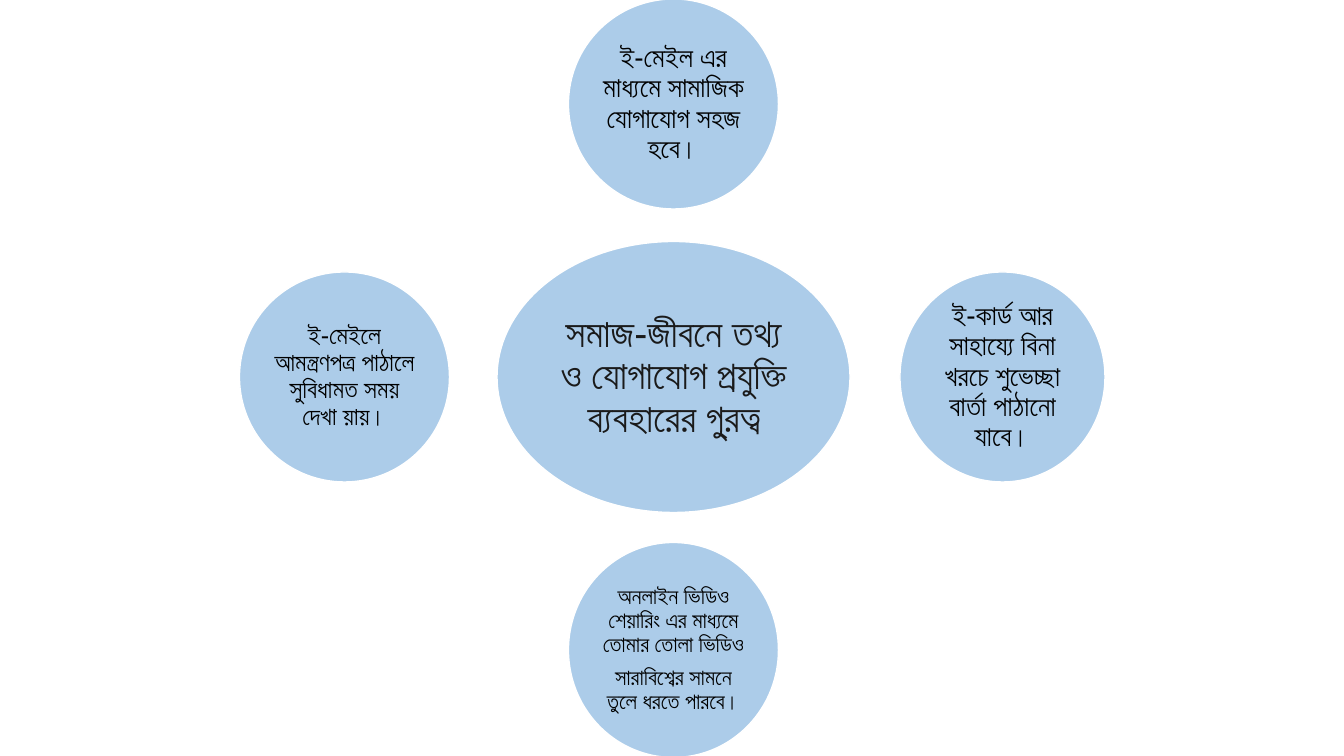
from lxml import etree
from pptx import Presentation
from pptx.dml.color import RGBColor
from pptx.enum.shapes import MSO_SHAPE
from pptx.enum.text import MSO_ANCHOR, PP_ALIGN
from pptx.oxml.ns import qn
from pptx.util import Emu, Pt

OVAL = MSO_SHAPE.OVAL
MIDDLE = MSO_ANCHOR.MIDDLE
CENTER = PP_ALIGN.CENTER

SLIDE_WIDTH, SLIDE_HEIGHT = 1344, 756
EMU_PER_PX = 12192000 / SLIDE_WIDTH
FONT = "Arial"
BLUE, WHITE, BLACK, CHARCOAL = "5B9BD5", "FFFFFF", "000000", "1A1A1A"

HUB_TEXT = ["সমাজ-জীবনে তথ্য ও যোগাযোগ প্রযুক্তি ব্যবহারের গু্রত্ব"]
HUB_SIZE = (353, 271)
REACH_X, REACH_Y = 329, 273
SATELLITES = [
    (0, -1, 210, 210, 20, ["ই-মেইল এর মাধ্যমে সামাজিক যোগাযোগ সহজ হবে।"]),
    (1, 0, 205, 210, 20, ["ই-কার্ড আর সাহায্যে বিনা খরচে শুভেচ্ছা বার্তা পাঠানো যাবে।"]),
    (0, 1, 210, 215, 16, ["অনলাইন ভিডিও শেয়ারিং এর মাধ্যমে তোমার তোলা ভিডিও",
                          "সারাবিশ্বের সামনে তুলে ধরতে পারবে।"]),
    (-1, 0, 210, 210, 18, ["ই-মেইলে আমন্ত্রণপত্র পাঠালে সুবিধামত সময় দেখা য়ায়।"]),
]


def px(length):
    """Turn a length in px into EMU."""
    return Emu(round(length * EMU_PER_PX))


def color(hex_string):
    """Turn a hex string into a colour."""
    return RGBColor.from_string(hex_string)


def set_alpha(shape, percent):
    """Make the solid fill of a shape partly transparent."""
    fill_color = shape._element.spPr.find(qn("a:solidFill"))[0]
    etree.SubElement(fill_color, qn("a:alpha"), val=str(percent * 1000))


def write_text(shape, lines, size, text_color, inset):
    """Write centred paragraphs inside a shape."""
    frame = shape.text_frame
    frame.word_wrap = True
    frame.vertical_anchor = MIDDLE
    frame.margin_left = frame.margin_right = px(inset)
    frame.margin_top = frame.margin_bottom = px(inset)
    for index, line in enumerate(lines):
        paragraph = frame.add_paragraph() if index else frame.paragraphs[0]
        paragraph.alignment = CENTER
        paragraph.line_spacing = 0.9
        paragraph.space_after = Pt(round(size * 0.35))
        run = paragraph.add_run()
        run.text = line
        run.font.name = FONT
        run.font.size = Pt(size)
        run.font.color.rgb = color(text_color)


def add_bubble(slide, center, box_size, lines, size, text_color, inset):
    """Draw one translucent ellipse with its text around a centre point."""
    (x, y), (width, height) = center, box_size
    bubble = slide.shapes.add_shape(
        OVAL, px(x - width / 2), px(y - height / 2), px(width), px(height))
    bubble.shadow.inherit = False
    bubble.fill.solid()
    bubble.fill.fore_color.rgb = color(BLUE)
    set_alpha(bubble, 50)
    bubble.line.color.rgb = color(WHITE)
    bubble.line.width = Pt(1)
    write_text(bubble, lines, size, text_color, inset)


def add_radial_diagram(slide, left, top, width, height):
    """Place the hub in the middle of the box and the satellites around it."""
    x, y = left + width / 2, top + height / 2
    add_bubble(slide, (x, y), HUB_SIZE, HUB_TEXT, 28, CHARCOAL, 4)
    for across, down, bubble_width, bubble_height, size, lines in SATELLITES:
        center = (x + across * REACH_X, y + down * REACH_Y)
        add_bubble(slide, center, (bubble_width, bubble_height), lines, size, BLACK, 3)


def main():
    """Build the slide and save it."""
    presentation = Presentation()
    presentation.slide_width = px(SLIDE_WIDTH)
    presentation.slide_height = px(SLIDE_HEIGHT)
    slide = presentation.slides.add_slide(presentation.slide_layouts[6])
    add_radial_diagram(slide, 239, -1, 869, SLIDE_HEIGHT)
    presentation.save("out.pptx")


if __name__ == "__main__":
    main()
